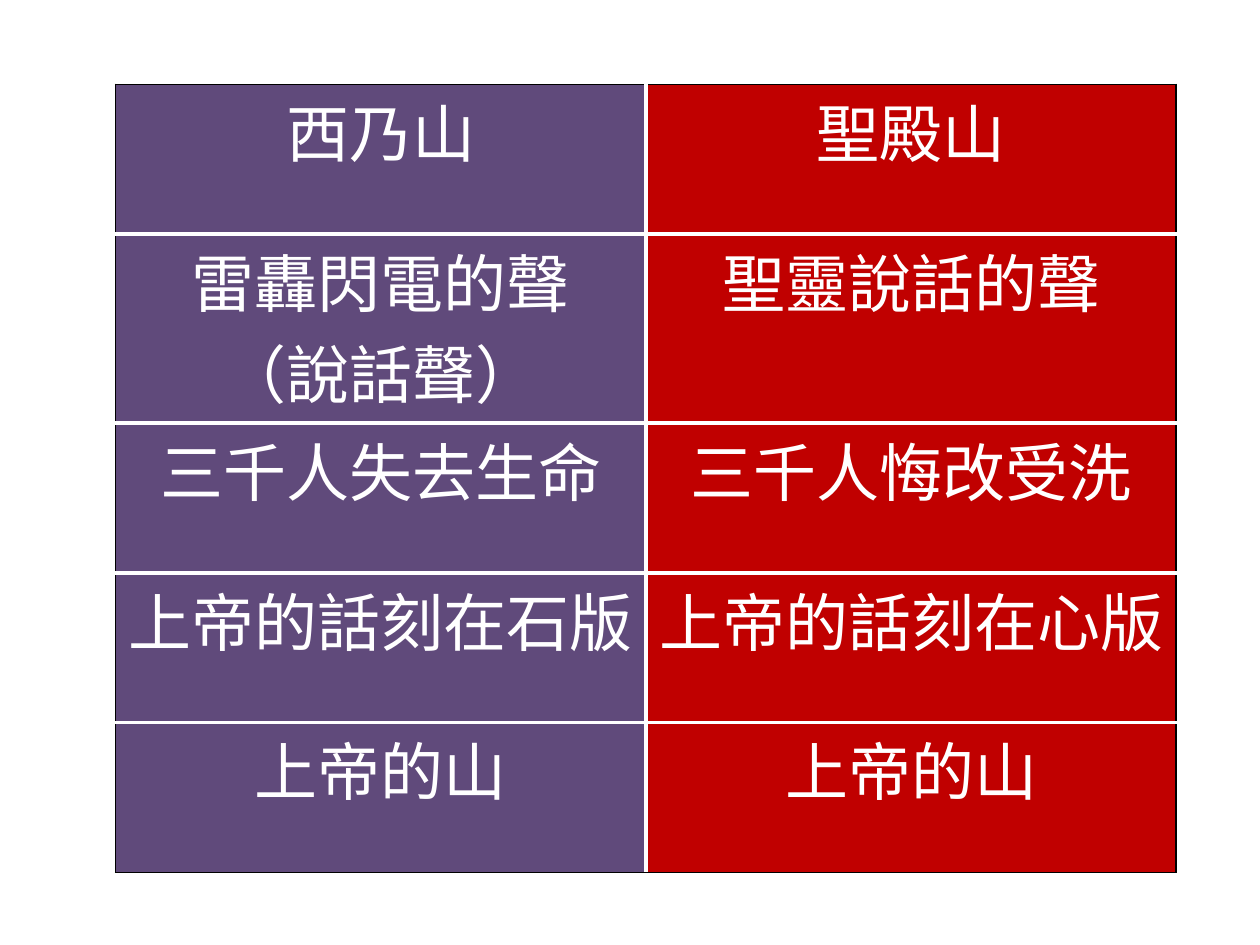
import pptx
import pptx.dml.color
import pptx.enum.text
import pptx.oxml
import pptx.oxml.ns
import pptx.util
from lxml import etree
from pptx.util import Cm, Pt

COLORS = {"sinai": "604A7B", "temple": "C00000", "white": "FFFFFF", "black": "000000"}
FONT = "Noto Sans CJK TC"
ROWS = [
    ("西乃山", "聖殿山"),
    ("雷轟閃電的聲\n（說話聲）", "聖靈說話的聲"),
    ("三千人失去生命", "三千人悔改受洗"),
    ("上帝的話刻在石版", "上帝的話刻在心版"),
    ("上帝的山", "上帝的山"),
]
COLUMN_FILLS = ("sinai", "temple")
COL_WIDTH = Cm(10.69)
ROW_HEIGHT = Cm(3.02)
TWO_LINE_HEIGHT = Cm(3.81)


def rgb(name):
    return pptx.dml.color.RGBColor.from_string(COLORS[name])


def write_text(tf, text, size=36, color="white", font=FONT):
    tf.text = text
    for p in tf.paragraphs:
        p.alignment = pptx.enum.text.PP_ALIGN.CENTER
        for r in p.runs:
            r.font.size = Pt(size)
            r.font.name = font
            r.font.color.rgb = rgb(color)
            ea = etree.SubElement(r.font._element, pptx.oxml.ns.qn("a:ea"))
            ea.set("typeface", font)


def add_border(tcPr, side, outer):
    color, width = ("black", 1) if outer else ("white", 2.25)
    ln = pptx.oxml.parse_xml(
        f'<a:{side} {pptx.oxml.ns.nsdecls("a")} w="{Pt(width)}">'
        f'<a:solidFill><a:srgbClr val="{COLORS[color]}"/></a:solidFill></a:{side}>'
    )
    tcPr.append(ln)


def format_cell(cell, text, fill, outer_sides):
    cell.margin_left = cell.margin_right = Cm(0.18)
    cell.margin_top = cell.margin_bottom = 0
    write_text(cell.text_frame, text)
    tcPr = cell._tc.get_or_add_tcPr()
    for side in ("lnL", "lnR", "lnT", "lnB"):
        add_border(tcPr, side, side in outer_sides)
    cell.fill.solid()
    cell.fill.fore_color.rgb = rgb(fill)


def add_comparison_table(s, left, top):
    heights = [TWO_LINE_HEIGHT if "\n" in row[0] else ROW_HEIGHT for row in ROWS]
    width = COL_WIDTH * len(COLUMN_FILLS)
    table = s.shapes.add_table(
        len(ROWS), len(COLUMN_FILLS), left, top, width, sum(heights)
    ).table
    table.first_row = table.horz_banding = False
    for column in table.columns:
        column.width = COL_WIDTH
    for i, (row, height) in enumerate(zip(ROWS, heights)):
        table.rows[i].height = height
        for j, (text, fill) in enumerate(zip(row, COLUMN_FILLS)):
            outer_sides = {"lnL" if j == 0 else "lnR"}
            if i == 0:
                outer_sides.add("lnT")
            if i == len(ROWS) - 1:
                outer_sides.add("lnB")
            format_cell(table.cell(i, j), text, fill, outer_sides)


def main():
    prs = pptx.Presentation()
    prs.slide_width, prs.slide_height = Cm(25.4), Cm(19.05)
    s = prs.slides.add_slide(prs.slide_layouts[6])
    add_comparison_table(s, Cm(2.33), Cm(1.7))
    prs.save("out.pptx")


if __name__ == "__main__":
    main()
